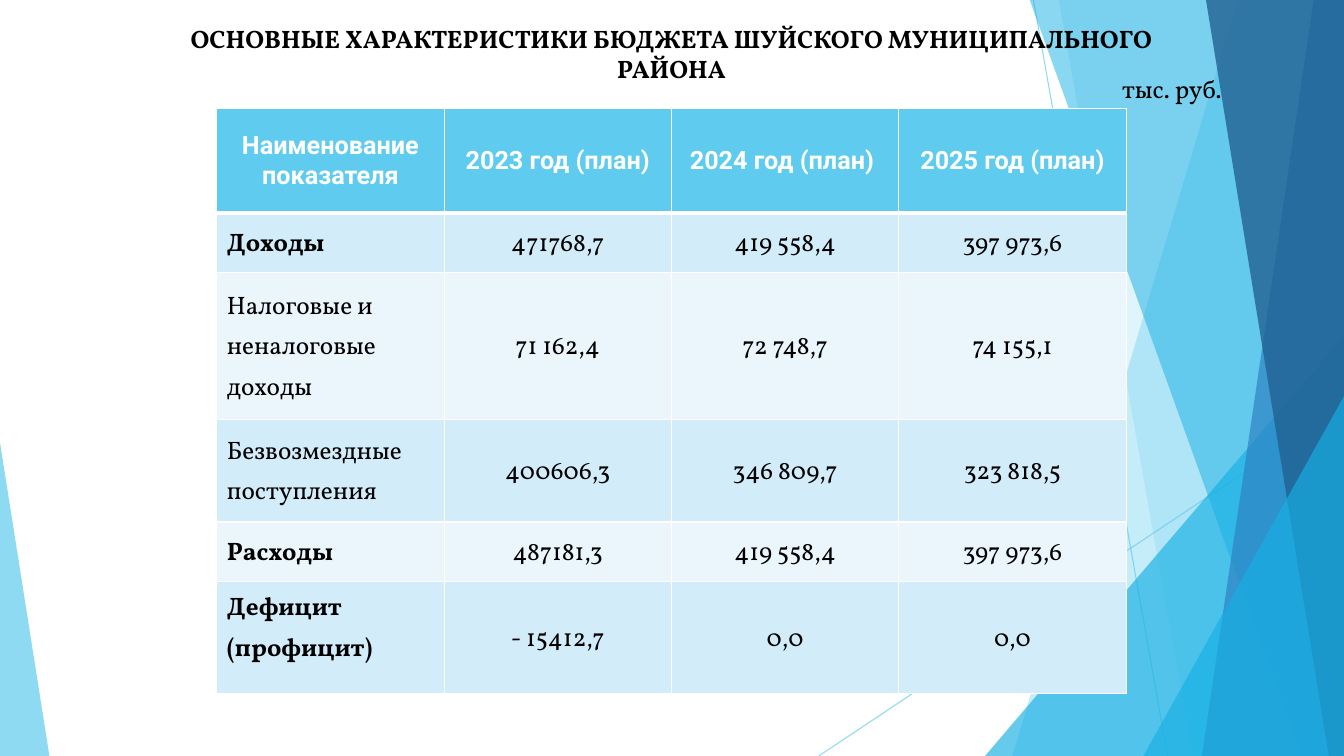
from lxml import etree
from pptx import Presentation
from pptx.dml.color import RGBColor
from pptx.enum.shapes import MSO_CONNECTOR, MSO_SHAPE
from pptx.enum.text import MSO_ANCHOR, MSO_AUTO_SIZE, PP_ALIGN
from pptx.oxml.ns import qn
from pptx.util import Inches, Pt

LINE, TRI = MSO_CONNECTOR.STRAIGHT, MSO_SHAPE.ISOSCELES_TRIANGLE
LEFT, MID = PP_ALIGN.LEFT, PP_ALIGN.CENTER
ANCHOR, GROW = MSO_ANCHOR.MIDDLE, MSO_AUTO_SIZE.SHAPE_TO_FIT_TEXT
WIDE, HIGH, TOP = 13.33, 7.5, -0.01
SKY, AQUA, BLUE, NAVY = "5FCBEF", "17B0E4", "2E83C3", "226292"
WHITE, BLACK = "FFFFFF", "000000"
BANDS = ["D2ECF9", "EAF6FC"]
SERIF, SANS = "Vollkorn", "Roboto"

TITLE = "ОСНОВНЫЕ ХАРАКТЕРИСТИКИ БЮДЖЕТА ШУЙСКОГО МУНИЦИПАЛЬНОГО РАЙОНА"
UNIT = "тыс. руб."
ROWS = [
    ["Наименование показателя", "2023 год (план)", "2024 год (план) ", "2025 год (план)"],
    ["Доходы", "471768,7", "419 558,4", "397 973,6"],
    ["Налоговые и неналоговые доходы", "71 162,4", "72 748,7", "74 155,1"],
    ["Безвозмездные поступления", "400606,3", "346 809,7", "323 818,5"],
    ["Расходы", "487181,3", "419 558,4", "397 973,6"],
    ["Дефицит (профицит)", "- 15412,7", "0,0", "0,0"],
]
TOTALS = {1, 4, 5}
GRID = (2.15, 1.08, 9.02)
TALL = [1.03, 0.59, 1.46, 1.02, 0.59, 1.0]

RAYS = [(10.25, 0, 11.58, HIGH), (WIDE, 4.03, 8.12, HIGH)]
# Slabs reach the right edge: (top x, foot x, colour, opacity).
# Peaks stand on the lower edge: (left, top, width, apex, colour, opacity).
FACETS = [
    (12.28, 10.04, SKY, 36),
    (10.5, 11.83, SKY, 20),
    (9.77, 3.33, 3.56, 1, AQUA, 66),
    (10.21, 12.91, AQUA, 50),
    (13.03, 11.92, BLUE, 70),
    (11.96, 13.18, NAVY, 80),
    (11.34, 3.93, 1.99, 1, AQUA, 66),
    (0, 4.39, 0.49, 0, SKY, 70),
]


def paint(fill, color, alpha=100):
    fill.solid()
    fill.fore_color.rgb = RGBColor.from_string(color)
    if alpha < 100:
        tone = fill._xPr.find(".//" + qn("a:srgbClr"))
        etree.SubElement(tone, qn("a:alpha"), val=str(alpha * 1000))


def write(frame, text, align, color=BLACK, **style):
    para = frame.paragraphs[0]
    para.alignment = align
    run = para.add_run()
    run.text = text
    for key, val in {"size": Pt(18), "name": SERIF, "bold": False, **style}.items():
        setattr(run.font, key, val)
    run.font.color.rgb = RGBColor.from_string(color)
    return para


def draw_ray(shapes, ray):
    line = shapes.add_connector(LINE, *map(Inches, ray))
    line.line.width = Pt(0.75)
    paint(line.line.fill, SKY, 70)
    etree.SubElement(line._element.spPr, qn("a:effectLst"))


def draw_facet(shapes, facet):
    *dims, color, alpha = facet
    if len(dims) == 2:
        head, foot = dims
        pen = shapes.build_freeform(Inches(head), Inches(TOP))
        ends = [(WIDE, TOP), (WIDE, HIGH), (foot, HIGH)]
        pen.add_line_segments([(Inches(x), Inches(y)) for x, y in ends])
        shape = pen.convert_to_shape()
    else:
        left, top, width, apex = dims
        shape = shapes.add_shape(TRI, *map(Inches, (left, top, width, HIGH - top)))
        shape.adjustments[0] = apex
    shape.shadow.inherit = False
    shape.line.fill.background()
    paint(shape.fill, color, alpha)


def edge(cell, head):
    """Give a cell white borders, with a thick one under the header."""
    props = cell._tc.get_or_add_tcPr()
    for spot, side in enumerate("LRTB"):
        width = Pt(3 if head and side == "B" else 1)
        line = etree.Element(qn("a:ln" + side), w=str(width))
        solid = etree.SubElement(line, qn("a:solidFill"))
        etree.SubElement(solid, qn("a:srgbClr"), val=WHITE)
        props.insert(spot, line)


def draw_table(shapes):
    left, top, width = GRID
    size = len(ROWS), len(ROWS[0])
    table = shapes.add_table(*size, *map(Inches, (left, top, width, sum(TALL)))).table
    for col in table.columns:
        col.width = Inches(width / size[1])
    for r, texts in enumerate(ROWS):
        table.rows[r].height = Inches(TALL[r])
        for c, text in enumerate(texts):
            cell = table.cell(r, c)
            cell.vertical_anchor = ANCHOR
            if r == 0:
                paint(cell.fill, SKY)
                write(cell.text_frame, text, MID, WHITE, name=SANS, bold=True)
            else:
                paint(cell.fill, BANDS[(r - 1) % 2])
                bold = c == 0 and r in TOTALS
                para = write(cell.text_frame, text, MID if c else LEFT, bold=bold)
                para.line_spacing = 1.15
            edge(cell, r == 0)
    table.cell(size[0] - 1, 0).margin_bottom = Inches(0.26)


def draw_text(shapes, box, text, align, bold):
    frame = shapes.add_textbox(*map(Inches, box)).text_frame
    frame.word_wrap = True
    frame.auto_size = GROW
    write(frame, text, align, bold=bold)


def main():
    deck = Presentation()
    deck.slide_width, deck.slide_height = Inches(WIDE), Inches(HIGH)
    shapes = deck.slides.add_slide(deck.slide_layouts[6]).shapes
    for ray in RAYS:
        draw_ray(shapes, ray)
    for facet in FACETS:
        draw_facet(shapes, facet)
    draw_table(shapes)
    draw_text(shapes, (1.44, 0.18, 10.44, 0.71), TITLE, MID, True)
    draw_text(shapes, (11.03, 0.68, 1.55, 0.4), UNIT, LEFT, False)
    deck.save("out.pptx")


if __name__ == "__main__":
    main()
